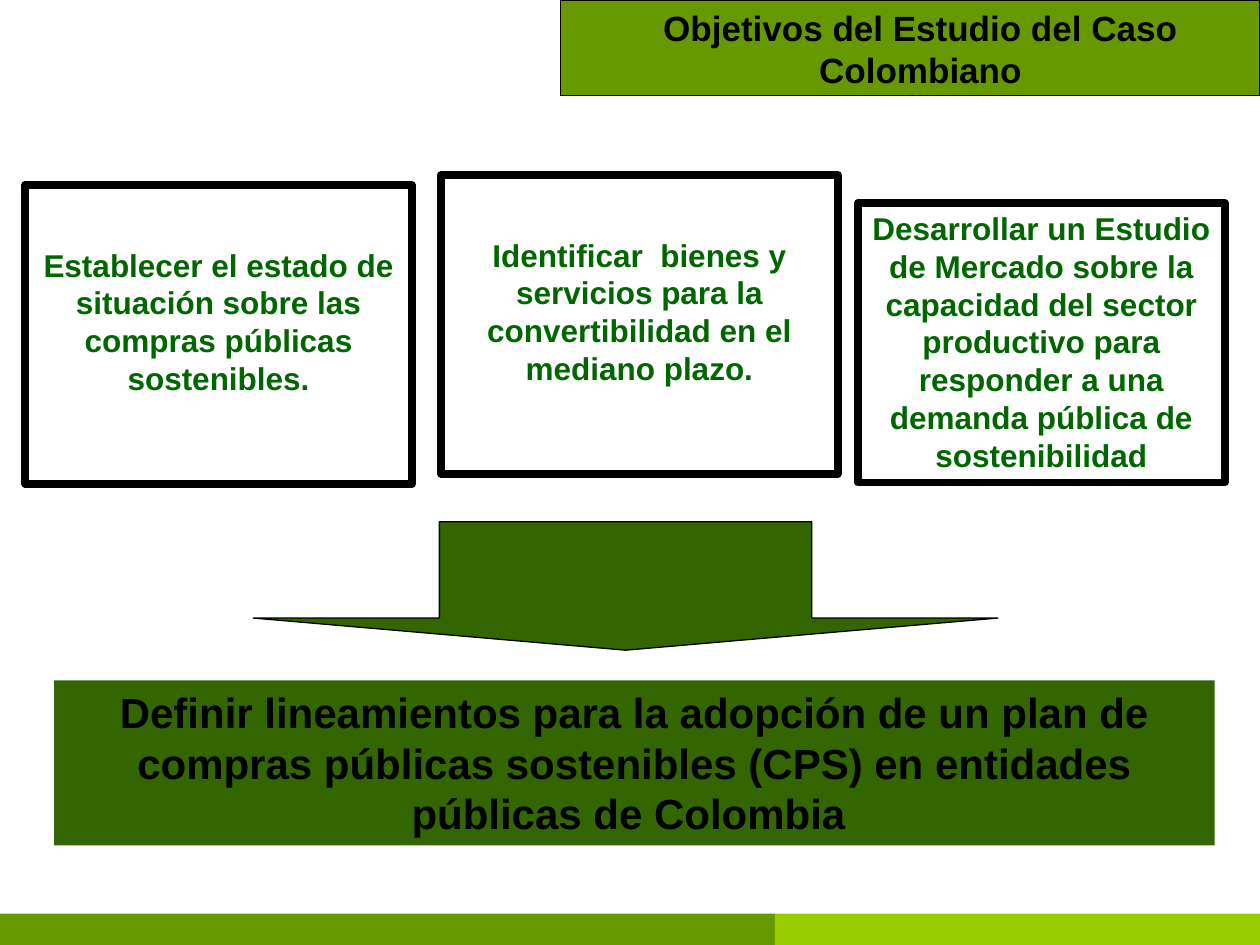
from pptx import Presentation
from pptx.dml.color import RGBColor
from pptx.enum.shapes import MSO_SHAPE
from pptx.enum.text import MSO_ANCHOR, PP_ALIGN
from pptx.util import Inches, Pt

RECT, DOWN_ARROW = MSO_SHAPE.RECTANGLE, MSO_SHAPE.DOWN_ARROW
TOP, CENTER = MSO_ANCHOR.TOP, PP_ALIGN.CENTER

WIDTH, HEIGHT = 10, 7.5
FONT = "Arial"
BLACK, TEXT_GREEN, DARK_GREEN = "000000", "006600", "336600"
GREEN, LIME = "669900", "99CC00"

TITLE = "Objetivos del Estudio del Caso Colombiano"
# text, (left, top, width, height), space above the text
OBJECTIVES = [
    ("Establecer el estado de situación sobre las compras públicas sostenibles.",
     (0.2, 1.47, 3.07, 2.37), 0.48),
    ("Identificar  bienes y servicios para la convertibilidad en el mediano plazo.",
     (3.5, 1.39, 3.15, 2.37), 0.48),
    ("Desarrollar un Estudio de Mercado sobre la capacidad del sector productivo "
     "para responder a una demanda pública de sostenibilidad",
     (6.81, 1.61, 2.91, 2.22), 0.05),
]
GOAL = ("Definir lineamientos para la adopción de un plan de compras públicas "
        "sostenibles (CPS) en entidades públicas de Colombia ")

TITLE_LEFT, TITLE_HEIGHT, TITLE_INDENT = 4.45, 0.76, 0.16
FOOTER_TOP, FOOTER_SPLIT = 7.25, 6.15


def rgb(color):
    return RGBColor.from_string(color)


def add_shape(slide, kind, box, fill=None, line=None, line_width=0.75):
    sp = slide.shapes.add_shape(kind, *map(Inches, box))
    sp.shadow.inherit = False
    if fill:
        sp.fill.solid()
        sp.fill.fore_color.rgb = rgb(fill)
    else:
        sp.fill.background()
    if line:
        sp.line.color.rgb = rgb(line)
        sp.line.width = Pt(line_width)
    else:
        sp.line.fill.background()
    return sp


def set_text(sp, text, size, color, margin_top=0.05):
    tf = sp.text_frame
    tf.word_wrap = True
    tf.vertical_anchor = TOP
    tf.margin_top = Inches(margin_top)
    p = tf.paragraphs[0]
    p.text = text
    p.alignment = CENTER
    p.font.name = FONT
    p.font.size = Pt(size)
    p.font.bold = True
    p.font.color.rgb = rgb(color)


def main():
    prs = Presentation()
    prs.slide_width, prs.slide_height = Inches(WIDTH), Inches(HEIGHT)
    slide = prs.slides.add_slide(prs.slide_layouts[6])

    title_width = WIDTH - TITLE_LEFT
    add_shape(slide, RECT, (TITLE_LEFT, 0, title_width, TITLE_HEIGHT), GREEN, BLACK)
    footer_height = HEIGHT - FOOTER_TOP
    add_shape(slide, RECT, (0, FOOTER_TOP, FOOTER_SPLIT, footer_height), GREEN)
    add_shape(slide, RECT, (FOOTER_SPLIT, FOOTER_TOP, WIDTH - FOOTER_SPLIT, footer_height), LIME)

    title_box = (TITLE_LEFT + TITLE_INDENT, 0, title_width - TITLE_INDENT, TITLE_HEIGHT)
    title = slide.shapes.add_textbox(*map(Inches, title_box))
    set_text(title, TITLE, 20, BLACK)

    for text, box, margin_top in OBJECTIVES:
        sp = add_shape(slide, RECT, box, line=BLACK, line_width=4.5)
        set_text(sp, text, 18, TEXT_GREEN, margin_top)

    goal = add_shape(slide, RECT, (0.43, 5.4, 9.21, 1.31), DARK_GREEN)
    set_text(goal, GOAL, 24, BLACK)

    arrow = add_shape(slide, DOWN_ARROW, (2.01, 4.14, 5.91, 1.02), DARK_GREEN, BLACK)
    arrow.adjustments[0] = 0.5
    arrow.adjustments[1] = 0.25

    prs.save("out.pptx")


if __name__ == "__main__":
    main()
